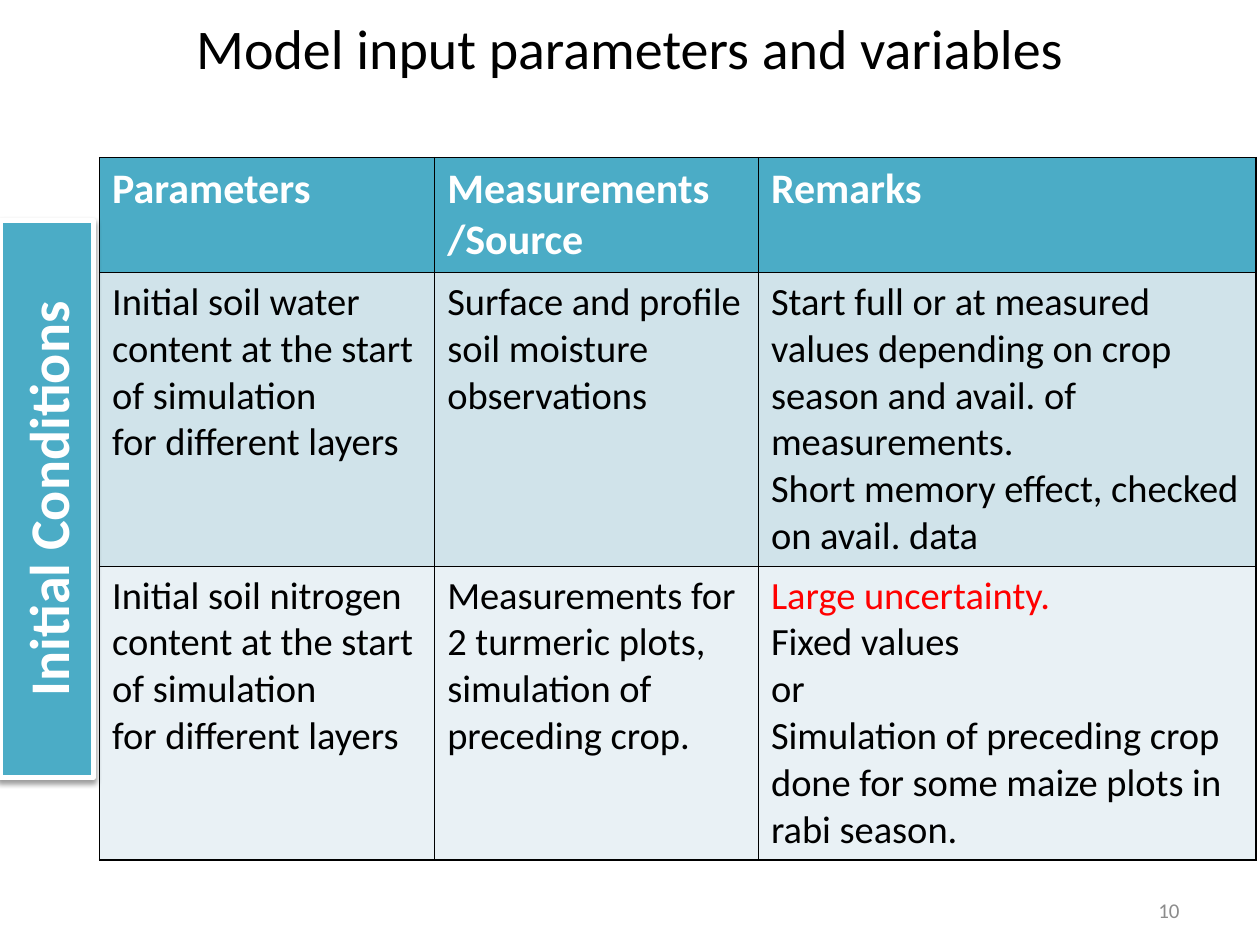
from lxml.etree import SubElement
from pptx import Presentation
from pptx.dml.color import RGBColor
from pptx.enum.shapes import MSO_SHAPE as Shape
from pptx.enum.text import MSO_ANCHOR as Anchor, PP_ALIGN as Align
from pptx.oxml import parse_xml
from pptx.oxml.ns import nsdecls, qn
from pptx.util import Inches, Pt

TEAL = RGBColor(0x4B, 0xAC, 0xC6)
BAND_DARK = RGBColor(0xD0, 0xE3, 0xEA)
BAND_LIGHT = RGBColor(0xE9, 0xF1, 0xF5)
WHITE = RGBColor(0xFF, 0xFF, 0xFF)
BLACK = RGBColor(0, 0, 0)
RED = RGBColor(0xFF, 0, 0)
GREY = RGBColor(0x8C, 0x8C, 0x8C)

TITLE = "Model input parameters and variables"
SECTION = "Initial Conditions"
PAGE = "10"
WARNING = "Large uncertainty."
# Each cell is a list of paragraphs.
ROWS = [
    [["Parameters"], ["Measurements", "/Source"], ["Remarks"]],
    [
        ["Initial soil water content at the start of simulation", "for different layers"],
        ["Surface and profile soil moisture observations"],
        ["Start full or at measured values depending on crop season and avail. of measurements.",
         "Short memory effect, checked on avail. data"],
    ],
    [
        ["Initial soil nitrogen content at the start of simulation", "for different layers"],
        ["Measurements for 2 turmeric plots, simulation of preceding crop."],
        [WARNING, "Fixed values", "or",
         "Simulation of preceding crop done for some maize plots in rabi season."],
    ],
]
ROW_FILLS = [TEAL, BAND_DARK, BAND_LIGHT]
ROW_HEIGHTS = [0.88, 2.31, 2.31]
COLUMN_WIDTHS = [2.66, 2.57, 3.95]
TABLE_LEFT, TABLE_TOP = 0.79, 1.25


def box(left, top, width, height):
    return [Inches(length) for length in (left, top, width, height)]


def write(frame, lines, size, color, bold=False, align=Align.LEFT, anchor=Anchor.MIDDLE):
    frame.word_wrap = True
    frame.vertical_anchor = anchor
    for index, line in enumerate(lines):
        paragraph = frame.paragraphs[0] if index == 0 else frame.add_paragraph()
        paragraph.alignment = align
        run = paragraph.add_run()
        run.text = line
        run.font.name = "Calibri"
        run.font.size = Pt(size)
        run.font.bold = bold
        run.font.color.rgb = RED if line == WARNING else color


def add_borders(cell):
    """Draw a black one-point line on every side; lines precede the fill."""
    properties = cell._tc.get_or_add_tcPr()
    for index, side in enumerate("LRTB"):
        properties.insert(index, parse_xml(
            f'<a:ln{side} {nsdecls("a")} w="{Pt(1)}"><a:solidFill>'
            f'<a:srgbClr val="{BLACK}"/></a:solidFill></a:ln{side}>'))


def add_title(slide):
    title = slide.shapes.title
    title.left, title.top, title.width, title.height = box(0.5, -0.25, 9, 1.25)
    write(title.text_frame, [TITLE], 32, BLACK, align=Align.CENTER)


def add_parameter_table(slide):
    area = box(TABLE_LEFT, TABLE_TOP, sum(COLUMN_WIDTHS), sum(ROW_HEIGHTS))
    table = slide.shapes.add_table(len(ROWS), len(COLUMN_WIDTHS), *area).table
    for column, width in zip(table.columns, COLUMN_WIDTHS):
        column.width = Inches(width)
    for r, (row, height, fill) in enumerate(zip(ROWS, ROW_HEIGHTS, ROW_FILLS)):
        table.rows[r].height = Inches(height)
        is_header = r == 0
        for c, lines in enumerate(row):
            cell = table.cell(r, c)
            cell.fill.solid()
            cell.fill.fore_color.rgb = fill
            add_borders(cell)
            write(cell.text_frame, lines, 24 if is_header else 22,
                  WHITE if is_header else BLACK, bold=is_header, anchor=Anchor.TOP)
            cell.vertical_anchor = Anchor.TOP


def add_section_label(slide):
    label = slide.shapes.add_shape(Shape.RECTANGLE, *box(0, 1.75, 0.74, 4.42))
    label.fill.solid()
    label.fill.fore_color.rgb = TEAL
    label.line.color.rgb = WHITE
    label.line.width = Pt(3)
    label.shadow.inherit = False
    effects = label._element.spPr.find(qn("a:effectLst"))
    shadow = SubElement(effects, qn("a:outerShdw"), blurRad=str(Pt(3.1)),
                        dist=str(Pt(1.6)), dir="5400000", rotWithShape="0")
    color = SubElement(shadow, qn("a:srgbClr"), val=str(BLACK))
    SubElement(color, qn("a:alpha"), val="38000")
    write(label.text_frame, [SECTION], 32, WHITE, bold=True, align=Align.CENTER)
    label.text_frame._txBody.bodyPr.set("vert", "vert270")


def add_page_number(slide):
    number = slide.shapes.add_textbox(*box(7.13, 7.02, 2.33, 0.4))
    write(number.text_frame, [PAGE], 12, GREY, align=Align.RIGHT)


def main():
    deck = Presentation()
    deck.slide_width, deck.slide_height = Inches(10), Inches(7.5)
    slide = deck.slides.add_slide(deck.slide_layouts[5])
    add_title(slide)
    add_parameter_table(slide)
    add_section_label(slide)
    add_page_number(slide)
    deck.save("out.pptx")


if __name__ == "__main__":
    main()
